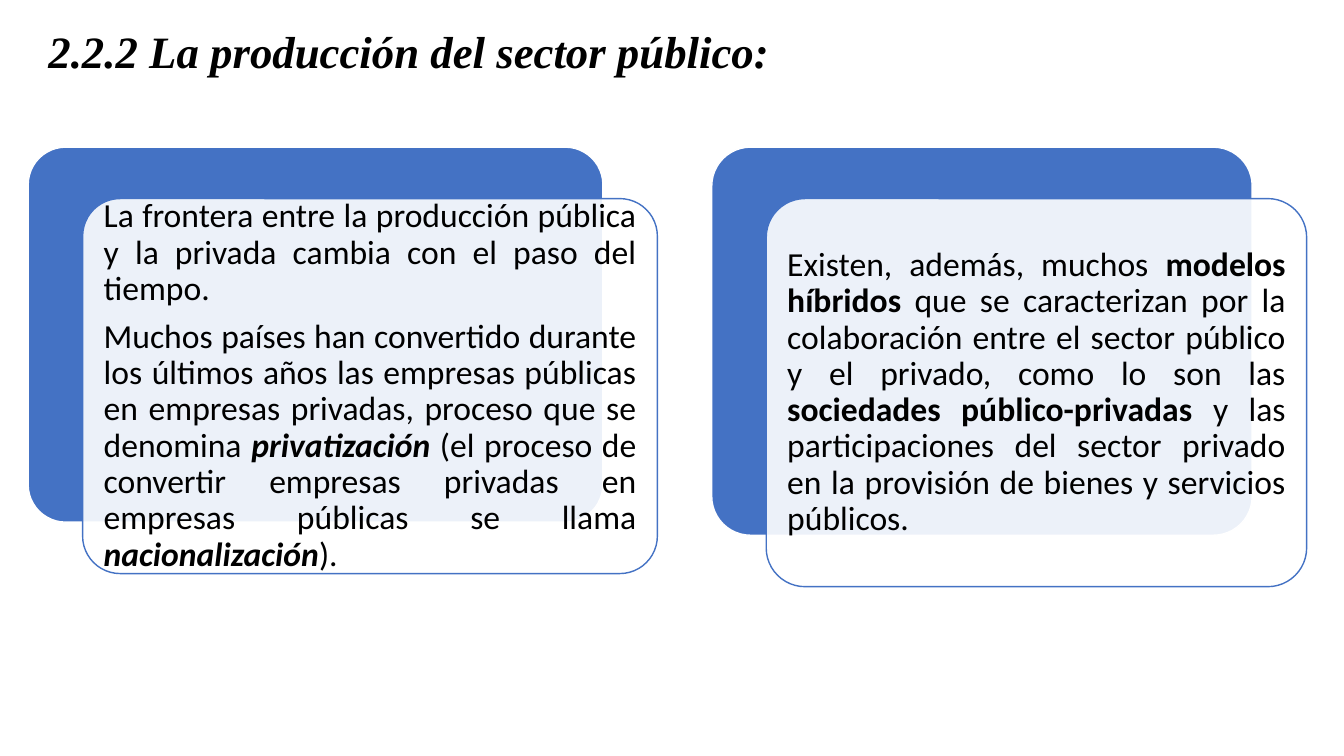
from dataclasses import dataclass

from lxml.etree import SubElement
from pptx import Presentation
from pptx.dml.color import RGBColor
from pptx.enum.shapes import MSO_SHAPE
from pptx.enum.text import MSO_ANCHOR, PP_ALIGN
from pptx.oxml.ns import qn
from pptx.shapes.autoshape import Shape
from pptx.slide import Slide
from pptx.util import Inches, Pt


@dataclass(frozen=True)
class Theme:
    blue: RGBColor = RGBColor(0x44, 0x72, 0xC4)
    white: RGBColor = RGBColor(0xFF, 0xFF, 0xFF)
    black: RGBColor = RGBColor(0, 0, 0)
    head: str = "Times New Roman"
    body: str = "Calibri"
    large: Pt = Pt(32)
    small: Pt = Pt(24)
    gap: Pt = Pt(8.4)


@dataclass(frozen=True)
class Span:
    text: str
    bold: bool = False
    italic: bool = False


@dataclass(frozen=True)
class Card:
    left: float
    width: float
    height: float
    paras: list[list[Span]]


THEME = Theme()
TOP = 1.46
SHIFT_X, SHIFT_Y = 0.54, 0.51
INSET = 0.11
SPACING = 0.9

CARDS = [
    Card(0.28, 5.7, 3.72, [
        [Span("La frontera entre la producción pública y la privada cambia con el paso del tiempo. ")],
        [
            Span("Muchos países han convertido durante los últimos años las empresas públicas "
                 "en empresas privadas, proceso que se denomina "),
            Span("privatización", True, True),
            Span(" (el proceso de convertir empresas privadas en empresas públicas se llama "),
            Span("nacionalización", True, True),
            Span(")."),
        ],
    ]),
    Card(7.06, 5.36, 3.85, [
        [
            Span("Existen, además, muchos "),
            Span("modelos híbridos", True),
            Span(" que se caracterizan por la colaboración entre el sector público y el privado, "
                 "como lo son las "),
            Span("sociedades público-privadas ", True),
            Span("y las participaciones del sector privado en la provisión de bienes y "
                 "servicios públicos."),
        ],
    ]),
]


def add_title(slide: Slide, text: str) -> None:
    title = slide.shapes.title
    title.left, title.top = Inches(0.38), Inches(0)
    title.width, title.height = Inches(11.04), Inches(1.58)
    frame = title.text_frame
    frame.text = text
    frame.word_wrap = True
    frame.vertical_anchor = MSO_ANCHOR.MIDDLE
    frame.margin_bottom = Inches(0.55)
    para = frame.paragraphs[0]
    para.alignment = PP_ALIGN.LEFT
    para.line_spacing = SPACING
    font = para.runs[0].font
    font.name, font.size = THEME.head, THEME.large
    font.bold = font.italic = True
    font.color.rgb = THEME.black


def add_panel(slide: Slide, card: Card, dx: float, dy: float,
              fill: RGBColor, line: RGBColor) -> Shape:
    panel = slide.shapes.add_shape(
        MSO_SHAPE.ROUNDED_RECTANGLE, Inches(card.left + dx), Inches(TOP + dy),
        Inches(card.width), Inches(card.height))
    panel.adjustments[0] = 0.1
    panel.shadow.inherit = False
    panel.fill.solid()
    panel.fill.fore_color.rgb = fill
    panel.line.color.rgb = line
    panel.line.width = Pt(1)
    return panel


def set_alpha(shape: Shape, percent: int) -> None:
    color = shape.fill._xPr.find(qn("a:solidFill"))[0]
    SubElement(color, qn("a:alpha"), val=str(percent * 1000))


def add_body(slide: Slide, card: Card) -> None:
    box = slide.shapes.add_textbox(
        Inches(card.left + SHIFT_X + INSET), Inches(TOP + SHIFT_Y + INSET),
        Inches(card.width - 2 * INSET), Inches(card.height - 2 * INSET))
    frame = box.text_frame
    frame.word_wrap = True
    frame.vertical_anchor = MSO_ANCHOR.MIDDLE
    frame.margin_left = frame.margin_right = Inches(0.1)
    frame.margin_top = frame.margin_bottom = Inches(0.1)
    for index, spans in enumerate(card.paras):
        para = frame.add_paragraph() if index else frame.paragraphs[0]
        para.alignment = PP_ALIGN.JUSTIFY
        para.line_spacing = SPACING
        para.space_after = THEME.gap
        for span in spans:
            run = para.add_run()
            run.text = span.text
            font = run.font
            font.name, font.size = THEME.body, THEME.small
            font.bold, font.italic = span.bold, span.italic
            font.color.rgb = THEME.black


def add_card(slide: Slide, card: Card) -> None:
    add_panel(slide, card, 0, 0, THEME.blue, THEME.white)
    front = add_panel(slide, card, SHIFT_X, SHIFT_Y, THEME.white, THEME.blue)
    set_alpha(front, 90)
    add_body(slide, card)


def main() -> None:
    deck = Presentation()
    deck.slide_width, deck.slide_height = Inches(13.33), Inches(7.5)
    slide = deck.slides.add_slide(deck.slide_layouts[5])
    add_title(slide, "2.2.2 La producción del sector público:")
    for card in CARDS:
        add_card(slide, card)
    deck.save("out.pptx")


if __name__ == "__main__":
    main()
